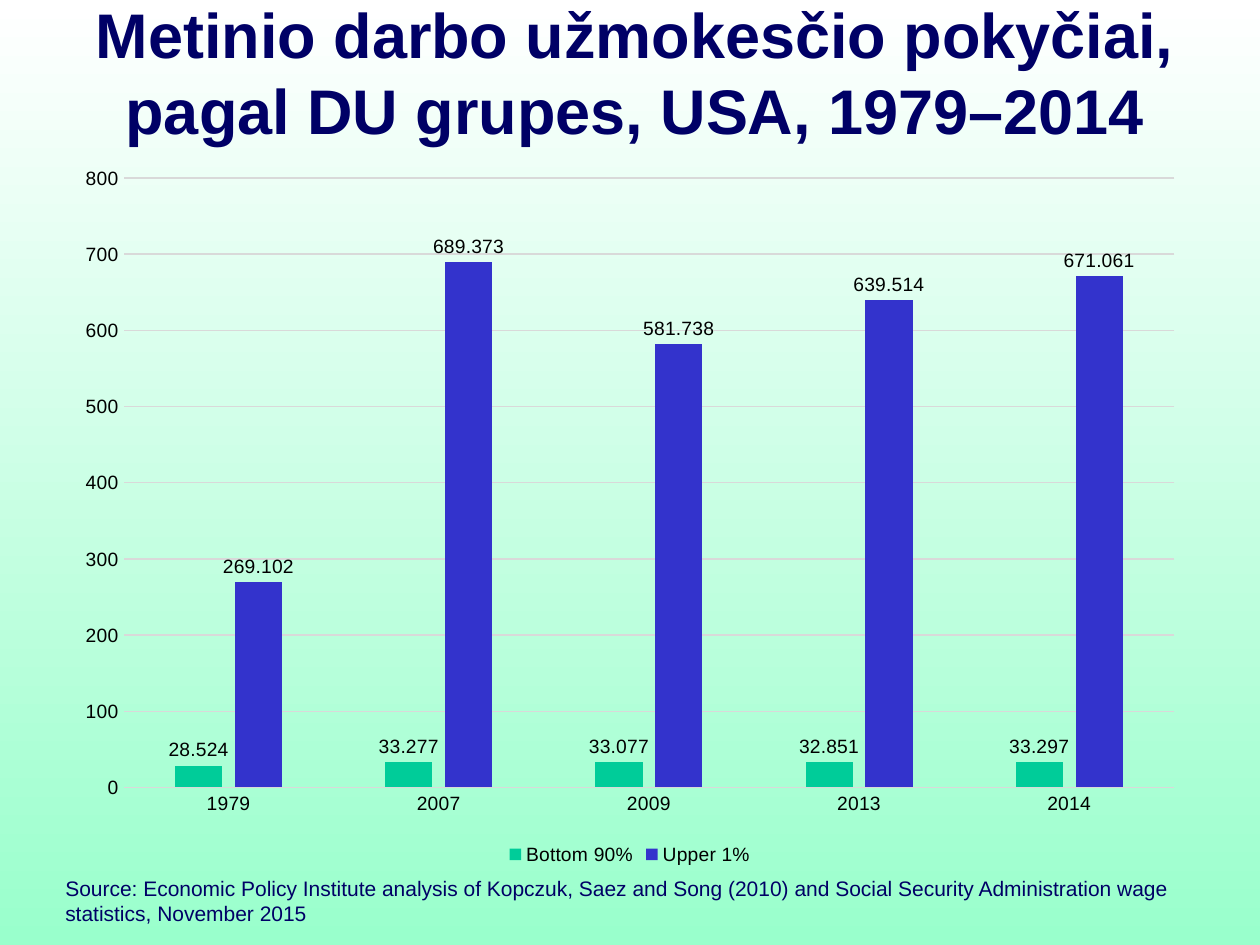
from pptx import Presentation
from pptx import util as u
from pptx.chart import data
from pptx.dml.color import RGBColor
from pptx.enum import chart as ch, text

NAVY = RGBColor(0x00, 0x00, 0x66)
BLACK = RGBColor(0x00, 0x00, 0x00)
GRAY = RGBColor(0xD9, 0xD9, 0xD9)
GREEN = RGBColor(0x00, 0xCC, 0x99)
BLUE = RGBColor(0x33, 0x33, 0xCC)
WHITE = RGBColor(0xFF, 0xFF, 0xFF)
MINT = RGBColor(0x99, 0xFF, 0xCC)

YEARS = ["1979", "2007", "2009", "2013", "2014"]
WAGES = [
    ("Bottom 90%", GREEN, [28.524, 33.277, 33.077, 32.851, 33.297]),
    ("Upper 1%", BLUE, [269.102, 689.373, 581.738, 639.514, 671.061]),
]


def apply(item, **values):
    for name, value in values.items():
        setattr(item, name, value)


class Deck:
    """Holds the style and the current slide."""

    face = "Arial"

    def __init__(self, wide, high):
        self.prs = Presentation()
        apply(self.prs, slide_width=u.Inches(wide), slide_height=u.Inches(high))
        self.slide = None

    def page(self, top, base):
        """Add a title-only slide shaded from top to base."""
        self.slide = self.prs.slides.add_slide(self.prs.slide_layouts[5])
        fill = self.slide.background.fill
        fill.gradient()
        fill.gradient_angle = 270
        for stop, color, place in zip(fill.gradient_stops, (top, base), (0, 1)):
            stop.color.rgb = color
            stop.position = place

    def font(self, font, size, color, bold=False):
        apply(font, name=self.face, size=u.Pt(size), bold=bold)
        font.color.rgb = color

    def label(self, shape, words, size, bold=False, **frame):
        body = shape.text_frame
        apply(body, text=words, word_wrap=True,
              auto_size=text.MSO_AUTO_SIZE.NONE, **frame)
        self.font(body.paragraphs[0].runs[0].font, size, NAVY, bold)
        return body.paragraphs[0]

    def title(self, words, box):
        shape = self.slide.shapes.title
        apply(shape, **dict(zip(("left", "top", "width", "height"),
                                map(u.Inches, box))))
        line = self.label(shape, words, 36, True,
                          vertical_anchor=text.MSO_ANCHOR.MIDDLE)
        line.alignment = text.PP_ALIGN.CENTER

    def note(self, words, box):
        shape = self.slide.shapes.add_textbox(*map(u.Inches, box))
        self.label(shape, words, 12)

    def rule(self, line):
        line.color.rgb = GRAY
        line.width = u.Pt(0.75)

    def columns(self, cats, rows, box):
        table = data.CategoryChartData(number_format="General")
        table.categories = cats
        for name, _, vals in rows:
            table.add_series(name, vals)
        chart = self.slide.shapes.add_chart(
            ch.XL_CHART_TYPE.COLUMN_CLUSTERED, *map(u.Inches, box), table).chart
        self.font(chart.font, 11, BLACK)
        apply(chart, has_title=False, has_legend=True)
        apply(chart.legend, position=ch.XL_LEGEND_POSITION.BOTTOM,
              include_in_layout=False)
        self.font(chart.legend.font, 11, BLACK)

        for axis in (chart.category_axis, chart.value_axis):
            apply(axis, major_tick_mark=ch.XL_TICK_MARK.NONE,
                  minor_tick_mark=ch.XL_TICK_MARK.NONE)
            self.font(axis.tick_labels.font, 11, BLACK)
        self.rule(chart.category_axis.format.line)
        apply(chart.value_axis, minimum_scale=0, maximum_scale=800,
              major_unit=100, has_major_gridlines=True)
        self.rule(chart.value_axis.major_gridlines.format.line)
        chart.value_axis.format.line.fill.background()

        plot = chart.plots[0]
        apply(plot, gap_width=219, overlap=-27, vary_by_categories=False)
        for bar, (_, color, _) in zip(plot.series, rows):
            bar.invert_if_negative = False
            bar.format.fill.solid()
            bar.format.fill.fore_color.rgb = color
            apply(bar.data_labels, show_value=True,
                  position=ch.XL_LABEL_POSITION.OUTSIDE_END)
            self.font(bar.data_labels.font, 11, BLACK)


def main():
    deck = Deck(10, 7.5)
    deck.page(WHITE, MINT)
    deck.title("Metinio darbo užmokesčio pokyčiai, pagal DU grupes, USA, 1979–2014",
               (0.54, -0.06, 9, 1.25))
    deck.columns(YEARS, WAGES, (0.5, 1.21, 9, 5.7))
    deck.note("Source: Economic Policy Institute analysis of Kopczuk, Saez and Song "
              "(2010) and Social Security Administration wage statistics, "
              "November 2015", (0.42, 6.9, 9, 0.6))
    deck.prs.save("out.pptx")


if __name__ == "__main__":
    main()
